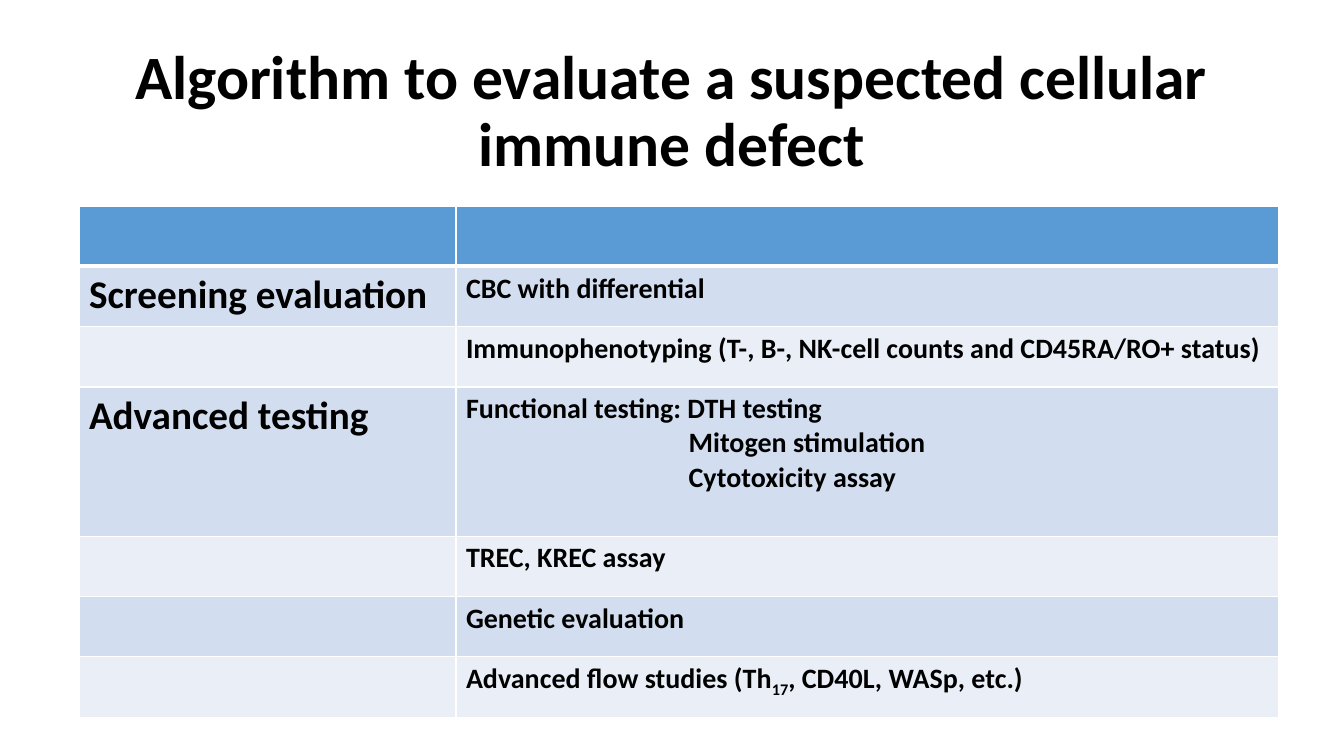
from dataclasses import dataclass
from lxml.etree import SubElement as Sub
from pptx import Presentation as Deck
from pptx.dml.color import RGBColor as Rgb
from pptx.enum.text import MSO_ANCHOR as Anchor, PP_ALIGN as Align
from pptx.oxml.ns import qn
from pptx.slide import Slide
from pptx.table import _Cell as Cell
from pptx.text.text import TextFrame as Frame
from pptx.util import Cm, Pt


@dataclass(frozen=True)
class Theme:
    font: str = "Calibri"
    ink: str = "000000"
    head: str = "5B9BD5"
    bands: tuple[str, str] = ("D2DEEF", "EAEFF7")
    rule: str = "FFFFFF"
    title: int = 44
    label: int = 28
    body: int = 20


@dataclass(frozen=True)
class Piece:
    text: str
    base: int = 0  # baseline shift in percent


@dataclass(frozen=True)
class Line:
    pieces: tuple[Piece, ...]
    indent: float = 0  # cm


@dataclass(frozen=True)
class Row:
    label: str
    lines: tuple[Line, ...]
    height: float = 1.52  # cm


def plain(text: str, indent: float = 0) -> Line:
    return Line((Piece(text),), indent)


THEME = Theme()
COLS = (9.5, 20.73)
HEAD = 1.5
STEP = 5.61  # lines up the tests below "DTH testing"
ROWS = (
    Row("Screening evaluation", (plain("CBC with differential"),)),
    Row("", (plain("Immunophenotyping (T-, B-, NK-cell counts and CD45RA/RO+ status)"),)),
    Row("Advanced testing", (
        plain("Functional testing: DTH testing"),
        plain("Mitogen stimulation", STEP),
        plain("Cytotoxicity assay", STEP),
    ), 3.76),
    Row("", (plain("TREC, KREC assay"),)),
    Row("", (plain("Genetic evaluation"),)),
    Row("", (Line((Piece("Advanced flow studies (Th"), Piece("17", -25),
                   Piece(", CD40L, WASp, etc.)"))),)),
)


def write(frame: Frame, lines: tuple[Line, ...], *, size: int,
          align: Align = Align.LEFT, space: float = 1.0) -> None:
    for i, line in enumerate(lines):
        para = frame.paragraphs[0] if i == 0 else frame.add_paragraph()
        para.alignment, para.line_spacing = align, space
        if line.indent:
            para._p.get_or_add_pPr().set("marL", str(Cm(line.indent)))
        for piece in line.pieces:
            run = para.add_run()
            run.text = piece.text
            font = run.font
            font.name, font.size, font.bold = THEME.font, Pt(size), True
            font.color.rgb = Rgb.from_string(THEME.ink)
            if piece.base:
                font._element.set("baseline", str(piece.base * 1000))


def paint(cell: Cell, fill: str, top: int = 1, low: int = 1) -> None:
    """Fill a cell and rule its four sides, widths in points."""
    props = cell._tc.get_or_add_tcPr()
    for side, width in (("L", 1), ("R", 1), ("T", top), ("B", low)):
        edge = Sub(props, qn(f"a:ln{side}"), w=str(Pt(width)))
        Sub(Sub(edge, qn("a:solidFill")), qn("a:srgbClr"), val=THEME.rule)
    cell.fill.solid()
    cell.fill.fore_color.rgb = Rgb.from_string(fill)


def add_title(slide: Slide, text: str) -> None:
    box = slide.shapes.add_textbox(Cm(2.33), Cm(1.01), Cm(29.21), Cm(3.68))
    frame = box.text_frame
    frame.word_wrap = True
    frame.vertical_anchor = Anchor.MIDDLE
    write(frame, (plain(text),), size=THEME.title, align=Align.CENTER, space=0.9)


def add_grid(slide: Slide) -> None:
    high = HEAD + sum(row.height for row in ROWS)
    grid = slide.shapes.add_table(len(ROWS) + 1, len(COLS), Cm(1.99), Cm(5.21),
                                  Cm(sum(COLS)), Cm(high)).table
    for col, width in zip(grid.columns, COLS):
        col.width = Cm(width)

    # Header band
    grid.rows[0].height = Cm(HEAD)
    for cell in grid.rows[0].cells:
        paint(cell, THEME.head, low=3)

    # Tests, in alternating bands
    for i, row in enumerate(ROWS):
        line = grid.rows[i + 1]
        line.height = Cm(row.height)
        for cell in line.cells:
            paint(cell, THEME.bands[i % 2], top=1 if i else 3)
        left, right = line.cells
        if row.label:
            write(left.text_frame, (plain(row.label),), size=THEME.label)
        write(right.text_frame, row.lines, size=THEME.body)


def main() -> None:
    deck = Deck()
    deck.slide_width, deck.slide_height = Cm(33.87), Cm(19.05)
    slide = deck.slides.add_slide(deck.slide_layouts[6])
    add_title(slide, "Algorithm to evaluate a suspected cellular immune defect")
    add_grid(slide)
    deck.save("out.pptx")


if __name__ == "__main__":
    main()
